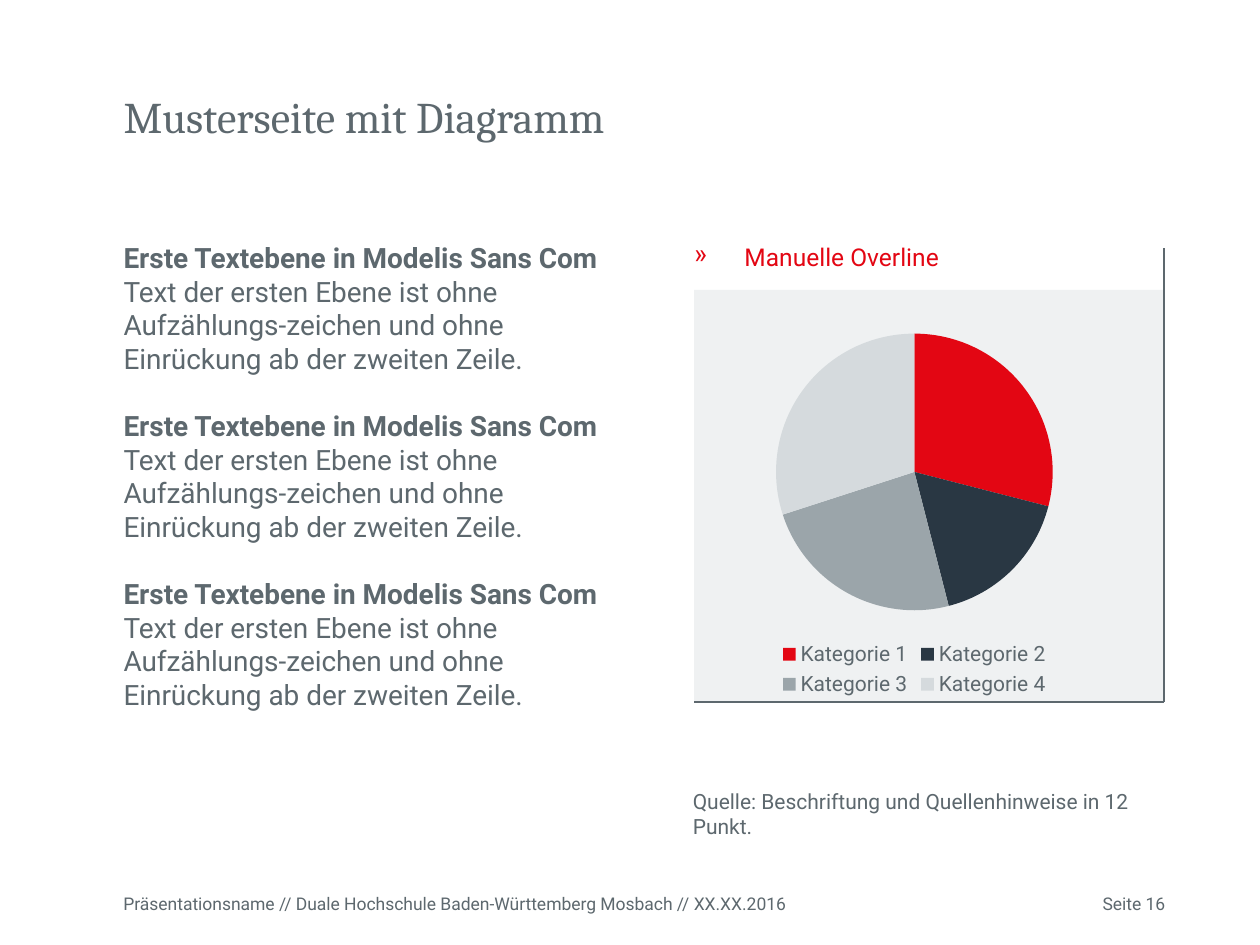
from lxml.etree import SubElement
from pptx import Presentation
from pptx.chart.data import CategoryChartData
from pptx.dml.color import RGBColor
from pptx.enum.chart import XL_CHART_TYPE as ChartType, XL_LEGEND_POSITION as LegendPosition
from pptx.enum.shapes import MSO_CONNECTOR as Connector, MSO_SHAPE as Shape
from pptx.enum.text import MSO_ANCHOR as Anchor, MSO_AUTO_SIZE as AutoSize, PP_ALIGN as Align
from pptx.oxml.ns import qn
from pptx.util import Pt

GREY = RGBColor(0x5D, 0x68, 0x6E)
RED = RGBColor(0xE3, 0x06, 0x13)
PANEL = RGBColor(0xEF, 0xF1, 0xF2)
NAVY = RGBColor(0x29, 0x37, 0x43)
MID_GREY = RGBColor(0x9B, 0xA5, 0xAA)
PALE_GREY = RGBColor(0xD5, 0xDA, 0xDD)
SERIF, SANS = "Cambria", "Roboto"

LEFT = 67.7
PANEL_LEFT, PANEL_RIGHT = 396.7, 665.3
PANEL_TOP, PANEL_BOTTOM = 165.6, 401
LINE_PITCH = 19.2

HEADING = "Erste Textebene in Modelis Sans Com"
DESCRIPTION = ("Text der ersten Ebene ist ohne Aufzählungs-zeichen "
               "und ohne Einrückung ab der zweiten Zeile.")
SLICES = [("Kategorie 1", 29, RED), ("Kategorie 2", 17, NAVY),
          ("Kategorie 3", 24, MID_GREY), ("Kategorie 4", 30, PALE_GREY)]


def place(shape, left, top, width, height):
    shape.left, shape.top = Pt(left), Pt(top)
    shape.width, shape.height = Pt(width), Pt(height)


def format_frame(shape, anchor, side=2.88, edge=0):
    frame = shape.text_frame
    frame.word_wrap = True
    frame.auto_size = AutoSize.NONE
    frame.vertical_anchor = anchor
    frame.margin_left = frame.margin_right = Pt(side)
    frame.margin_top = frame.margin_bottom = Pt(edge)
    return frame


def add_run(paragraph, text, size, color=GREY, font=SANS, bold=False):
    run = paragraph.add_run()
    run.text = text
    run.font.name = font
    run.font.size = Pt(size)
    run.font.bold = bold
    run.font.color.rgb = color


def set_bullet(paragraph, indent=0, character=None, color=None):
    properties = paragraph._p.get_or_add_pPr()
    properties.set("marL", str(Pt(indent)))
    properties.set("indent", str(-Pt(indent)))
    if character is None:
        SubElement(properties, qn("a:buNone"))
        return
    bullet_color = SubElement(properties, qn("a:buClr"))
    SubElement(bullet_color, qn("a:srgbClr")).set("val", str(color))
    SubElement(properties, qn("a:buChar")).set("char", character)


def add_label(slide, box, text, size, color=GREY, align=Align.LEFT, anchor=Anchor.TOP,
              side=7.2, edge=3.6):
    label = slide.shapes.add_textbox(*map(Pt, box))
    paragraph = format_frame(label, anchor, side, edge).paragraphs[0]
    paragraph.alignment = align
    add_run(paragraph, text, size, color)
    return paragraph


def fill_title(slide):
    title = slide.shapes.title
    place(title, LEFT, 24.5, 609, 57)
    paragraph = format_frame(title, Anchor.BOTTOM).paragraphs[0]
    paragraph.alignment = Align.LEFT
    add_run(paragraph, "Musterseite mit Diagramm", 25, font=SERIF)


def fill_body(slide, sections):
    body = slide.placeholders[1]
    place(body, LEFT, 137.5, 303, 326)
    frame = format_frame(body, Anchor.TOP)
    for index in range(2 * sections):
        is_heading = index % 2 == 0
        paragraph = frame.add_paragraph() if index else frame.paragraphs[0]
        set_bullet(paragraph)
        paragraph.line_spacing = Pt(LINE_PITCH)
        paragraph.space_before = Pt(LINE_PITCH if is_heading and index else 0)
        paragraph.space_after = Pt(0)
        add_run(paragraph, HEADING if is_heading else DESCRIPTION, 16, bold=is_heading)


def add_rule(shapes, *ends):
    rule = shapes.add_connector(Connector.STRAIGHT, *map(Pt, ends))
    rule.line.color.rgb = GREY
    rule.line.width = Pt(1)
    SubElement(rule._element.spPr, qn("a:effectLst"))


def add_panel(slide):
    shapes = slide.shapes.add_group_shape().shapes
    panel = shapes.add_shape(Shape.RECTANGLE, Pt(PANEL_LEFT), Pt(PANEL_TOP),
                             Pt(PANEL_RIGHT - PANEL_LEFT), Pt(PANEL_BOTTOM - PANEL_TOP))
    panel.shadow.inherit = False
    panel.fill.solid()
    panel.fill.fore_color.rgb = PANEL
    panel.line.fill.background()
    add_rule(shapes, PANEL_RIGHT, PANEL_BOTTOM, PANEL_RIGHT, 142)
    add_rule(shapes, PANEL_LEFT, PANEL_BOTTOM, PANEL_RIGHT, PANEL_BOTTOM)


def add_pie(slide):
    data = CategoryChartData()
    data.categories = [name for name, _, _ in SLICES]
    data.add_series("Series 1", [value for _, value, _ in SLICES])
    chart = slide.shapes.add_chart(ChartType.PIE, Pt(392.5), Pt(180.7), Pt(260), Pt(220.3),
                                   data).chart
    chart.has_title = False
    chart.font.name = SANS
    chart.font.size = Pt(12)
    chart.font.color.rgb = GREY
    chart.has_legend = True
    chart.legend.position = LegendPosition.BOTTOM
    chart.legend.include_in_layout = False
    plot = chart.plots[0]
    plot.vary_by_categories = True
    for index, (_, _, color) in enumerate(SLICES):
        fill = plot.series[0].points[index].format.fill
        fill.solid()
        fill.fore_color.rgb = color


def main():
    presentation = Presentation()
    presentation.slide_width, presentation.slide_height = Pt(720), Pt(540)
    slide = presentation.slides.add_slide(presentation.slide_layouts[1])

    # Title and text column
    fill_title(slide)
    fill_body(slide, 3)

    # Footer
    footer = {"anchor": Anchor.MIDDLE, "side": 2.88, "edge": 0}
    add_label(slide, (LEFT, 501.8, 440, 28.8),
              "Präsentationsname // Duale Hochschule Baden-Württemberg Mosbach // XX.XX.2016",
              10, **footer)
    add_label(slide, (512.6, 501.8, 156.2, 28.8), "Seite 16", 10, align=Align.RIGHT, **footer)

    # Chart panel with overline and source note
    add_label(slide, (388.8, 447.1, 267, 36),
              "Quelle: Beschriftung und Quellenhinweise in 12 Punkt.", 12)
    add_panel(slide)
    overline = add_label(slide, (389.5, 134.6, 203, 24.5), "Manuelle Overline", 14, RED)
    set_bullet(overline, 28.8, "»", RED)
    add_pie(slide)

    presentation.save("out.pptx")


if __name__ == "__main__":
    main()
